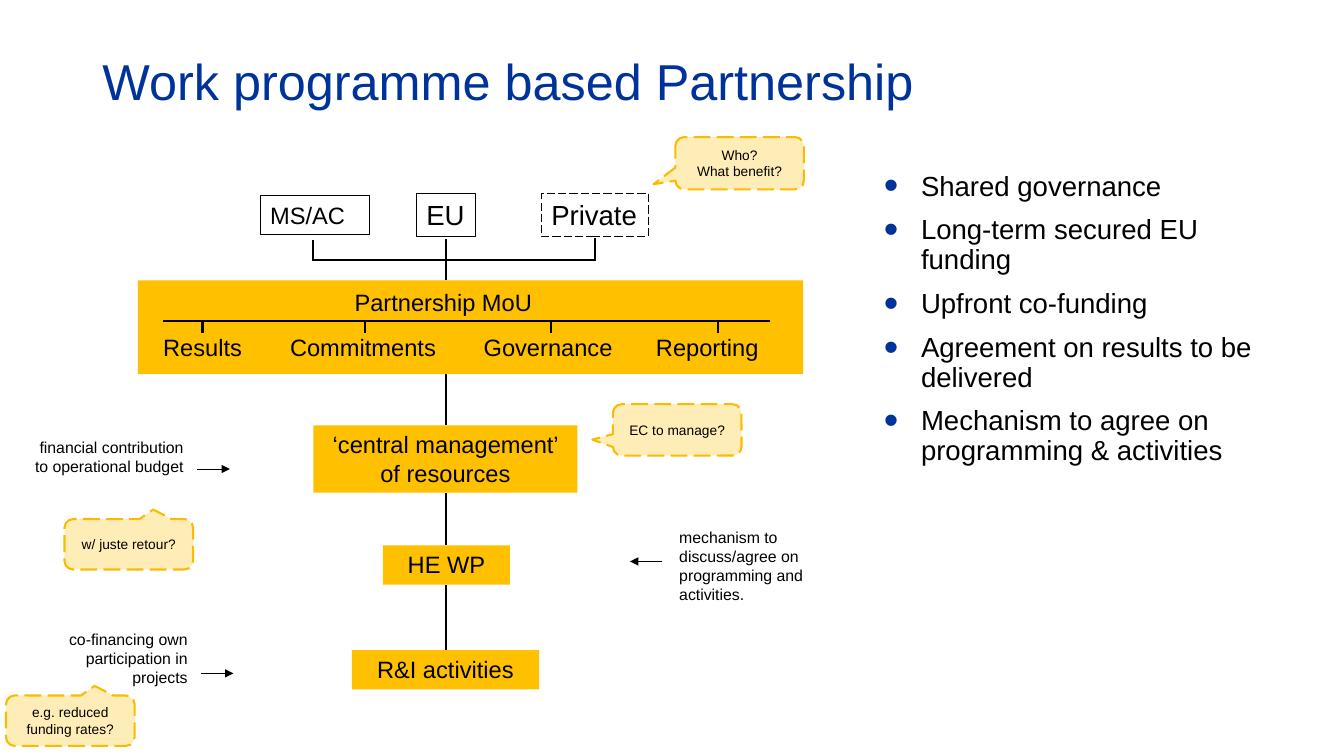
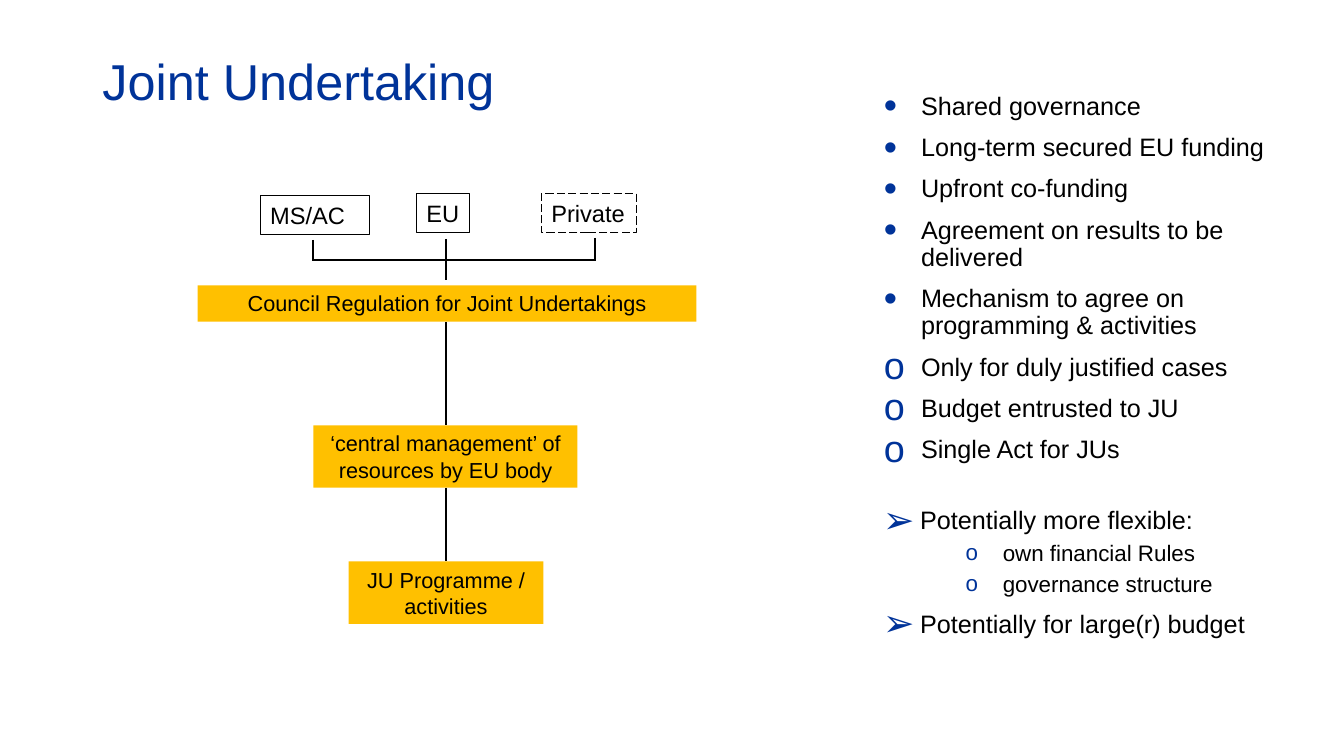
import pptx
import pptx.util
import pptx.dml.color
import pptx.enum.dml
import pptx.enum.shapes
import pptx.enum.text
import pptx.oxml
import pptx.oxml.ns

Pt = pptx.util.Pt
ALIGN = pptx.enum.text.PP_ALIGN
ANCHOR = pptx.enum.text.MSO_ANCHOR
SHAPE = pptx.enum.shapes.MSO_SHAPE
LONG_DASH = pptx.enum.dml.MSO_LINE.LONG_DASH

FONT = "Arial"
BLUE, BLACK, GOLD = "003399", "000000", "FFC000"
CALLOUT_FILL, CALLOUT_LINE = "FFEDB8", "FABC00"

TITLE_BOX = (66, 28.8, 828, 62)
FUNDERS_BOX = (185.8, 138.2, 277.2, 62)
SPINE_X = 318.8
BULLET_INDENT = 26.6
LARGE, MEDIUM, SMALL, NOTE, CALLOUT = 19.7, 16.9, 15.5, 11.3, 9.8

GOVERNANCE_POINTS = [
    "Shared governance",
    "Long-term secured EU funding",
    "Upfront co-funding",
    "Agreement on results to be delivered",
    "Mechanism to agree on programming & activities",
]


def rgb(value):
    return pptx.dml.color.RGBColor.from_string(value)


def points(*lengths):
    return [Pt(length) for length in lengths]


def style_text(shape, size, color=BLACK, align=ALIGN.LEFT, anchor=ANCHOR.TOP, wrap=True):
    frame = shape.text_frame
    frame.auto_size = pptx.enum.text.MSO_AUTO_SIZE.NONE
    frame.word_wrap = wrap
    frame.vertical_anchor = anchor
    for para in frame.paragraphs:
        para.alignment = align
        for span in para.runs:
            span.font.name = FONT
            span.font.size = Pt(size)
            span.font.color.rgb = rgb(color)


def add_label(page, text, box, size, align=ALIGN.LEFT):
    label = page.shapes.add_textbox(*points(*box))
    label.text_frame.text = text
    style_text(label, size, align=align)


def add_block(page, box, text="", size=MEDIUM, kind=SHAPE.RECTANGLE, fill=None,
              line=None, width=0.75, dash=None, **text_style):
    block = page.shapes.add_shape(kind, *points(*box))
    block.shadow.inherit = False
    if fill:
        block.fill.solid()
        block.fill.fore_color.rgb = rgb(fill)
    else:
        block.fill.background()
    if line:
        block.line.color.rgb = rgb(line)
        block.line.width = Pt(width)
        block.line.dash_style = dash
    else:
        block.line.fill.background()
    block.text_frame.text = text
    style_text(block, size, **text_style)
    return block


def add_line(page, start, end, width=1.5, arrow=False):
    line = page.shapes.add_connector(
        pptx.enum.shapes.MSO_CONNECTOR.STRAIGHT, *points(*start, *end))
    line.line.color.rgb = rgb(BLACK)
    line.line.width = Pt(width)
    if arrow:
        head = pptx.oxml.parse_xml(
            f'<a:tailEnd {pptx.oxml.ns.nsdecls("a")} type="triangle"/>')
        line.line._get_or_add_ln().append(head)
    line._element.spPr.append(
        pptx.oxml.parse_xml(f'<a:effectLst {pptx.oxml.ns.nsdecls("a")}/>'))


def add_callout(page, text, box, tip):
    """Dashed speech bubble; tip is the pointer's offset as a share of the box."""
    callout = add_block(page, box, text, CALLOUT, SHAPE.ROUNDED_RECTANGULAR_CALLOUT,
                        CALLOUT_FILL, CALLOUT_LINE, 1.5, LONG_DASH,
                        align=ALIGN.CENTER, anchor=ANCHOR.MIDDLE)
    for index, value in enumerate((*tip, 0.17)):
        callout.adjustments[index] = value


def add_page(deck, title):
    page = deck.slides.add_slide(deck.slide_layouts[5])
    heading = page.shapes.title
    heading.left, heading.top, heading.width, heading.height = points(*TITLE_BOX)
    heading.text_frame.text = title
    style_text(heading, 36, BLUE, anchor=ANCHOR.MIDDLE)
    heading.text_frame.paragraphs[0].line_spacing = 0.9
    return page


def set_bullet(para, symbol, left, percent):
    properties = para._p.get_or_add_pPr()
    properties.set("marL", str(Pt(left)))
    properties.set("indent", str(Pt(-BULLET_INDENT)))
    for element in (
        f'<a:buClr {{}}><a:srgbClr val="{BLUE}"/></a:buClr>',
        f'<a:buSzPct {{}} val="{percent * 1000}"/>',
        f'<a:buFont {{}} typeface="{FONT}"/>',
        f'<a:buChar {{}} char="{symbol}"/>',
    ):
        properties.append(
            pptx.oxml.parse_xml(element.format(pptx.oxml.ns.nsdecls("a"))))


def add_bullets(page, box, items, size):
    """Items are (symbol, text, level); level 1 is indented and smaller."""
    area = page.shapes.add_textbox(*points(*box))
    frame = area.text_frame
    frame.text = "\n".join(text for _, text, _ in items)
    style_text(area, size)
    for index, (para, (symbol, _, level)) in enumerate(zip(frame.paragraphs, items)):
        para.level = level
        set_bullet(para, symbol, 85.7 if level else BULLET_INDENT, 100 if level else 150)
        para.line_spacing = 0.9
        if index:
            para.space_before = Pt(5 if level else 10)
        if level:
            para.runs[0].font.size = Pt(size - 2)


def add_funders(page, box, size, eu_width, private_width, height):
    """Three funding parties joined by a bracket."""
    left, top = box[:2]
    bar = top + 47.5
    add_line(page, (left + 37.4, bar), (left + 239.8, bar))
    add_line(page, (left + 38.1, top + 33.1), (left + 38.1, bar))
    add_line(page, (left + 239, top + 31.7), (left + 239, bar))
    add_line(page, (SPINE_X, top + 32.4), (SPINE_X, top + box[3]))
    add_block(page, (left, top + 1.4, 78.5, 28.1), "MS/AC", line=BLACK)
    add_block(page, (left + 111.6, top, eu_width, height), "EU", size,
              line=BLACK, wrap=False)
    add_block(page, (left + 200.9, top, private_width, height), "Private", size,
              line=BLACK, dash=LONG_DASH, wrap=False)


def add_chain(page, steps, size):
    """Stacked gold boxes with a connector in every gap."""
    for (_, upper), (_, lower) in zip(steps, steps[1:]):
        add_line(page, (SPINE_X, upper[1] + upper[3]), (SPINE_X, lower[1]))
    for text, box in steps:
        add_block(page, box, text, size, fill=GOLD, align=ALIGN.CENTER)


def add_memorandum(page, box):
    """Heading, rule and four topics inside the memorandum block."""
    left, top = box[:2]
    rule = top + 28.8
    add_label(page, "Partnership MoU", (left + 147.6, top + 2.2, 160, 28), MEDIUM)
    add_line(page, (left + 18, rule), (left + 451.4, rule))
    for text, offset, width, tick in (
        ("Results", 10.8, 82, 46.1),
        ("Commitments", 101.5, 126.7, 162),
        ("Governance", 239.8, 113, 295.2),
        ("Reporting", 362.9, 112.3, 414),
    ):
        add_label(page, text, (left + offset, top + 34.2, width, 28), MEDIUM)
        add_line(page, (left + tick, rule), (left + tick, rule + 8.6))


def add_margin_notes(page):
    for text, box, align, start, end in (
        ("financial contribution to operational budget",
         (15.8, 308.9, 122.4, 34.6), ALIGN.RIGHT, (140.8, 335), (164.2, 335)),
        ("co-financing own participation in projects",
         (18.7, 446.4, 122.4, 48.2), ALIGN.RIGHT, (143.3, 481), (166.7, 481)),
        ("mechanism to discuss/agree on programming and activities.",
         (478.1, 373.7, 145.4, 62), ALIGN.LEFT, (473, 401), (450, 401)),
    ):
        add_label(page, text, box, NOTE, align)
        add_line(page, start, end, 0.5, arrow=True)
    for text, left, top, height, tip in (
        ("Who?\nWhat benefit?", 482.4, 97.9, 37.4, (-0.67, 0.4)),
        ("EC to manage?", 437.8, 288.7, 36.7, (-0.66, 0.19)),
        ("w/ juste retour?", 46.1, 370.8, 36, (0.19, -0.69)),
        ("e.g. reduced funding rates?", 4.3, 496.8, 36, (0.19, -0.69)),
    ):
        add_callout(page, text, (left, top, 91.8, height), tip)


def build_work_programme(deck):
    page = add_page(deck, "Work programme based Partnership")
    memorandum = (98.6, 200.2, 475.2, 67)
    add_funders(page, FUNDERS_BOX, LARGE, 42.5, 76.3, 31)
    add_chain(page, [
        ("", memorandum),
        ("‘central management’ of resources", (223.9, 303.8, 188.6, 48.2)),
        ("HE WP", (273.6, 389.5, 90.7, 28.1)),
        ("R&I activities", (251.3, 464.4, 133.9, 28.1)),
    ], MEDIUM)
    add_memorandum(page, memorandum)
    add_margin_notes(page)
    add_bullets(page, (624.2, 119.5, 294.5, 196),
                [("•", text, 0) for text in GOVERNANCE_POINTS], LARGE)


def build_joint_undertaking(deck):
    page = add_page(deck, "Joint Undertaking")
    add_funders(page, FUNDERS_BOX, MEDIUM, 38.2, 67.7, 28.1)
    add_chain(page, [
        ("Council Regulation for Joint Undertakings", (141.1, 203.8, 356.4, 25.9)),
        ("‘central management’ of resources by EU body", (223.9, 303.8, 188.6, 44.6)),
        ("JU Programme / activities", (249.1, 401, 139, 44.6)),
    ], SMALL)
    conditions = ["Only for duly justified cases", "Budget entrusted to JU",
                  "Single Act for JUs"]
    add_bullets(page, (624.2, 63.4, 294.5, 290),
                [("•", text, 0) for text in GOVERNANCE_POINTS]
                + [("o", text, 0) for text in conditions], 18)
    add_bullets(page, (623.5, 359.3, 316, 152), [
        ("➢", "Potentially more flexible:", 0),
        ("o", "own financial Rules", 1),
        ("o", "governance structure", 1),
        ("➢", "Potentially for large(r) budget", 0),
    ], 18)


def main():
    deck = pptx.Presentation()
    deck.slide_width, deck.slide_height = points(960, 540)
    build_work_programme(deck)
    build_joint_undertaking(deck)
    deck.save("out.pptx")


if __name__ == "__main__":
    main()
